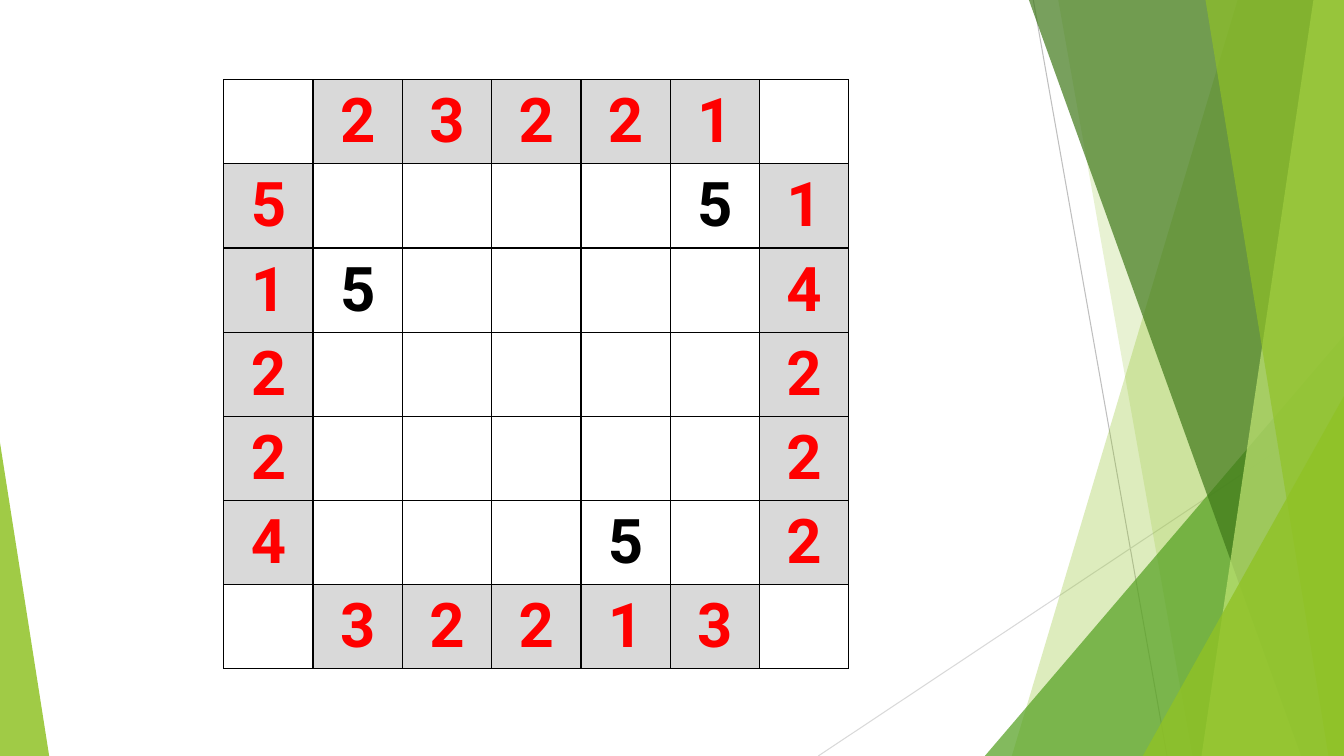
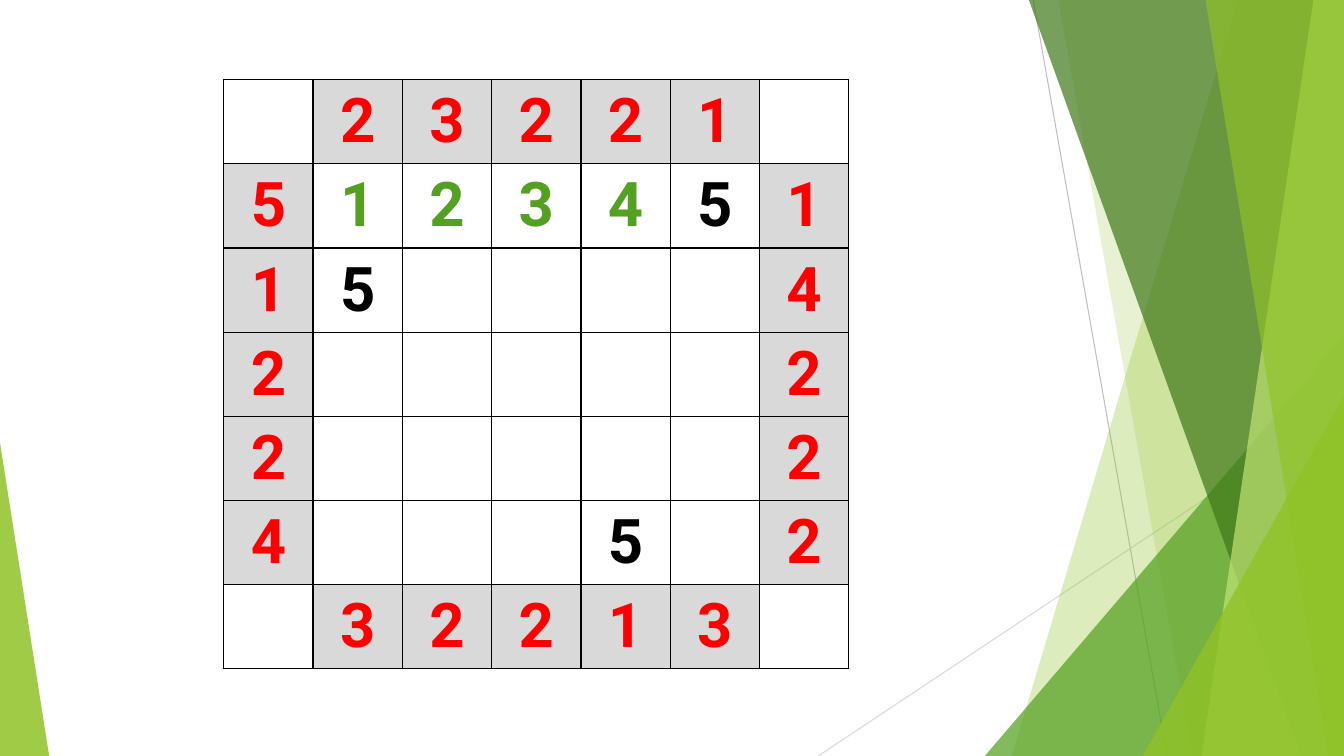
from lxml import etree
from pptx import Presentation
from pptx import util as u
from pptx.dml.color import RGBColor
from pptx.enum import shapes, text
from pptx.oxml.ns import qn

WIDTH, HEIGHT = 33.87, 19.05
LIME, GREEN, FOREST, PALE = "90C226", "54A021", "3F7819", "C0E474"
RED, BLACK, GREY = "FF0000", "000000", "D9D9D9"
COLUMN, ROW = 2.25, 2.12

PUZZLE = [
    " 23221 ",
    "5    51",
    "15    4",
    "2     2",
    "2     2",
    "4   5 2",
    " 32213 ",
]
FIRST_ROW_SOLVED = [PUZZLE[0], "5123451", *PUZZLE[2:]]


def paint(fill, colour):
    fill.solid()
    fill.fore_color.rgb = RGBColor.from_string(colour)


def write(cell, words, *, colour, size=44, font="Roboto", bold=True):
    cell.vertical_anchor = text.MSO_ANCHOR.MIDDLE
    para = cell.text_frame.paragraphs[0]
    para.alignment = text.PP_ALIGN.CENTER
    span = para.add_run()
    span.text = words
    span.font.size = u.Pt(size)
    span.font.name = font
    span.font.bold = bold
    paint(span.font.fill, colour)


deck = Presentation()
deck.slide_width, deck.slide_height = u.Cm(WIDTH), u.Cm(HEIGHT)
blank = deck.slide_layouts[6]
for placeholder in list(blank.placeholders):
    blank.shapes.element.remove(placeholder.element)
pages = [deck.slides.add_slide(blank) for _ in range(2)]
canvas = pages[0].shapes

for x1, y1, x2, y2, colour in [
    (26.04, 0, 29.41, HEIGHT, "BFBFBF"),
    (WIDTH, 10.24, 20.62, HEIGHT, "D9D9D9"),
]:
    line = canvas.add_connector(
        shapes.MSO_CONNECTOR.STRAIGHT, u.Cm(x1), u.Cm(y1), u.Cm(x2), u.Cm(y2)
    )
    paint(line.line.fill, colour)
    line.line.width = u.Pt(0.75)
    etree.SubElement(line.element.spPr, qn("a:effectLst"))

for kind, outline, colour, opacity in [
    ("band", (31.19, 25.5), LIME, 30),
    ("band", (26.67, 30.05), LIME, 20),
    ("triangle", (24.82, 8.46, 9.05, 1), GREEN, 72),
    ("band", (25.93, 32.79), FOREST, 70),
    ("band", (33.1, 30.28), PALE, 70),
    ("band", (30.38, 33.48), LIME, 65),
    ("triangle", (28.8, 9.98, 5.07, 1), LIME, 80),
    ("triangle", (0, 11.15, 1.24, 0), LIME, 85),
]:
    if kind == "band":
        top_x, bottom_x = outline
        builder = canvas.build_freeform(u.Cm(top_x), 0)
        corners = [(WIDTH, 0), (WIDTH, HEIGHT), (bottom_x, HEIGHT)]
        builder.add_line_segments([(u.Cm(x), u.Cm(y)) for x, y in corners])
        facet = builder.convert_to_shape()
    else:
        left, top, width, apex = outline
        facet = canvas.add_shape(
            shapes.MSO_SHAPE.ISOSCELES_TRIANGLE,
            u.Cm(left), u.Cm(top), u.Cm(width), u.Cm(HEIGHT - top),
        )
        facet.adjustments[0] = apex
    facet.shadow.inherit = False
    facet.line.fill.background()
    paint(facet.fill, colour)
    tint = facet.element.spPr.find(".//" + qn("a:srgbClr"))
    etree.SubElement(tint, qn("a:alpha"), val=str(opacity * 1000))

for decoration in list(canvas):
    blank.shapes.element.append(decoration.element)

for page, grid in zip(pages, [PUZZLE, FIRST_ROW_SOLVED]):
    count = len(grid)
    table = page.shapes.add_table(
        count, count, u.Cm(5.64), u.Cm(2.01), u.Cm(COLUMN * count), u.Cm(ROW * count)
    ).table
    table.first_row = table.horz_banding = False
    for column in table.columns:
        column.width = u.Cm(COLUMN)
    for row in table.rows:
        row.height = u.Cm(ROW)
    for r, digits in enumerate(grid):
        for c, digit in enumerate(digits):
            cell = table.cell(r, c)
            properties = cell._tc.get_or_add_tcPr()
            for side in ("lnL", "lnR", "lnT", "lnB"):
                border = etree.SubElement(properties, qn("a:" + side), w=str(u.Pt(1)))
                solid = etree.SubElement(border, qn("a:solidFill"))
                etree.SubElement(solid, qn("a:srgbClr"), val=BLACK)
            cell.fill.background()
            if digit == " ":
                continue
            if r in (0, count - 1) or c in (0, count - 1):
                paint(cell.fill, GREY)
                colour = RED
            else:
                colour = BLACK if PUZZLE[r][c] == digit else GREEN
            write(cell, digit, colour=colour)

deck.save("out.pptx")
